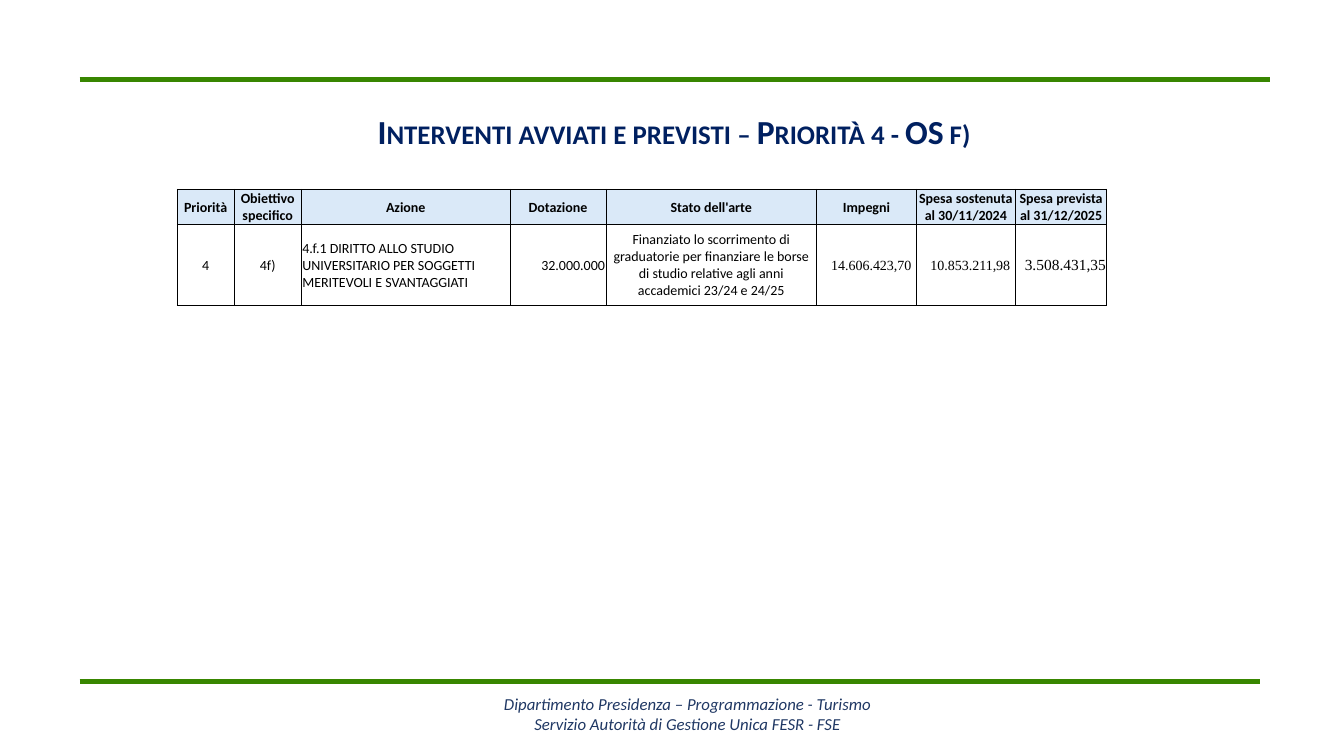
from lxml.etree import SubElement
from pptx import Presentation
from pptx.dml.color import RGBColor
from pptx.enum.shapes import MSO_CONNECTOR
from pptx.enum.text import MSO_ANCHOR, PP_ALIGN
from pptx.oxml.ns import qn
from pptx.util import Inches, Pt

COLORS = {"rule": "388600", "footer": "203864", "title": "002060",
          "text": "000000", "header": "DAE9F8"}
LEFT, CENTER, RIGHT = PP_ALIGN.LEFT, PP_ALIGN.CENTER, PP_ALIGN.RIGHT
SERIF = "Times New Roman"
COLS = [0.56, 0.67, 2.07, 0.95, 2.09, 0.99, 0.98, 0.91]
ROWS = [0.34, 0.81]
HEADERS = ["Priorità", "Obiettivo specifico", "Azione", "Dotazione",
           "Stato dell'arte", "Impegni", "Spesa sostenuta\val 30/11/2024",
           "Spesa prevista al 31/12/2025"]
VALUES = [
    ("4", {}),
    ("4f)", {}),
    ("4.f.1 DIRITTO ALLO STUDIO UNIVERSITARIO PER SOGGETTI MERITEVOLI "
     "E SVANTAGGIATI", {"align": LEFT}),
    ("32.000.000", {"align": RIGHT}),
    ("Finanziato lo scorrimento di graduatorie per finanziare le borse di "
     "studio relative agli anni accademici 23/24 e 24/25", {}),
    ("14.606.423,70", {"align": RIGHT, "font": SERIF}),
    ("10.853.211,98", {"align": RIGHT, "font": SERIF}),
    ("3.508.431,35", {"align": RIGHT, "font": SERIF, "size": 11}),
]


def rgb(name):
    return RGBColor.from_string(COLORS[name])


def write(tf, text, size=10, color="text", font="Calibri", align=CENTER,
          bold=False, italic=False, small_caps=False):
    tf.word_wrap = True
    tf.text = text
    for p in tf.paragraphs:
        p.alignment = align
        for r in p.runs:
            r.font.size, r.font.name = Pt(size), font
            r.font.bold, r.font.italic = bold, italic
            r.font.color.rgb = rgb(color)
            if small_caps:
                r._r.get_or_add_rPr().set("cap", "small")


def add_rule(s, x1, x2, y):
    line = s.shapes.add_connector(MSO_CONNECTOR.STRAIGHT, Inches(x1), Inches(y),
                                  Inches(x2), Inches(y))
    line.line.color.rgb = rgb("rule")
    line.line.width = Pt(3.25)
    SubElement(line._element.spPr, qn("a:effectLst"))


def add_text(s, box, text, **fmt):
    tf = s.shapes.add_textbox(*map(Inches, box)).text_frame
    write(tf, text, **fmt)
    return tf


def add_title(s, box):
    add_text(s, box, "Interventi avviati e previsti – Priorità 4 - OS f)",
             size=24, color="title", bold=True, small_caps=True)


def add_footer(s, box):
    tf = add_text(s, box, "Dipartimento Presidenza – Programmazione - Turismo\n"
                  "Servizio Autorità di Gestione Unica FESR - FSE",
                  size=12, color="footer", italic=True)
    tf.margin_top = tf.margin_bottom = 0


def set_borders(cell, widths):
    tcPr = cell._tc.get_or_add_tcPr()
    for side, width in widths.items():
        ln = SubElement(tcPr, qn(f"a:ln{side}"), w=str(Pt(width)))
        fill = SubElement(ln, qn("a:solidFill"))
        SubElement(fill, qn("a:srgbClr"), val=COLORS["text"])


def add_measures(s, x, y):
    table = s.shapes.add_table(len(ROWS), len(COLS), Inches(x), Inches(y),
                               Inches(sum(COLS)), Inches(sum(ROWS))).table
    for col, width in zip(table.columns, COLS):
        col.width = Inches(width)
    for row, height in zip(table.rows, ROWS):
        row.height = Inches(height)
    grid = [[(text, {"bold": True}) for text in HEADERS], VALUES]
    last = len(COLS) - 1
    for i, cells in enumerate(grid):
        for j, (text, fmt) in enumerate(cells):
            cell = table.cell(i, j)
            cell.vertical_anchor = MSO_ANCHOR.MIDDLE
            cell.margin_left = cell.margin_right = cell.margin_top = Inches(0.01)
            cell.margin_bottom = 0
            if fmt.get("font") == SERIF and j < last:
                cell.margin_right = Inches(0.05)
            set_borders(cell, {"L": 1 if j == 0 else 0.5,
                               "R": 1 if j == last else 0.5,
                               "T": 1 if i == 0 else 0.5, "B": 0.5})
            if i == 0:
                cell.fill.solid()
                cell.fill.fore_color.rgb = rgb("header")
            else:
                cell.fill.background()
            write(cell.text_frame, text, **fmt)


def main():
    prs = Presentation()
    prs.slide_width, prs.slide_height = Inches(13.33), Inches(7.5)
    s = prs.slides.add_slide(prs.slide_layouts[6])
    add_rule(s, 0.79, 12.6, 0.79)
    add_rule(s, 0.79, 12.5, 6.76)
    add_footer(s, (0.52, 6.88, 12.6, 0.57))
    add_title(s, (0.78, 1.05, 11.81, 0.5))
    add_measures(s, 1.76, 1.88)
    prs.save("out.pptx")


if __name__ == "__main__":
    main()
